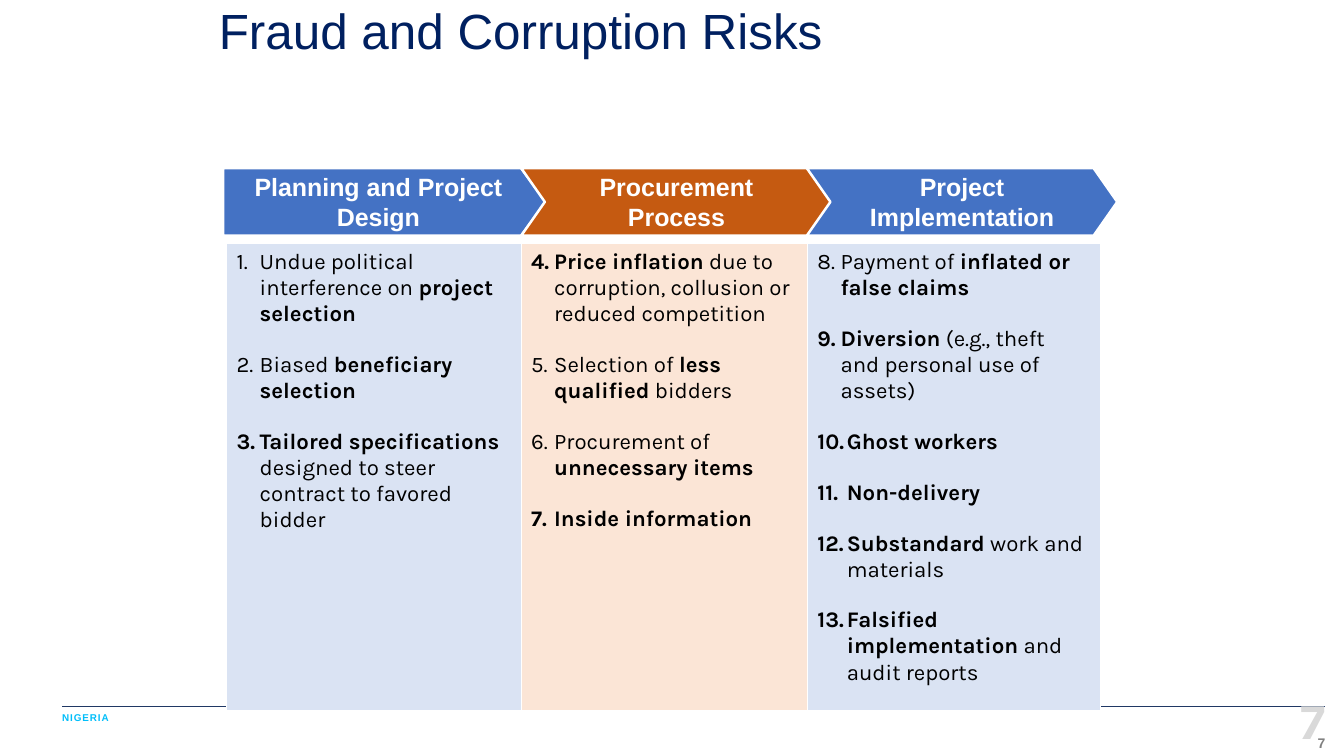
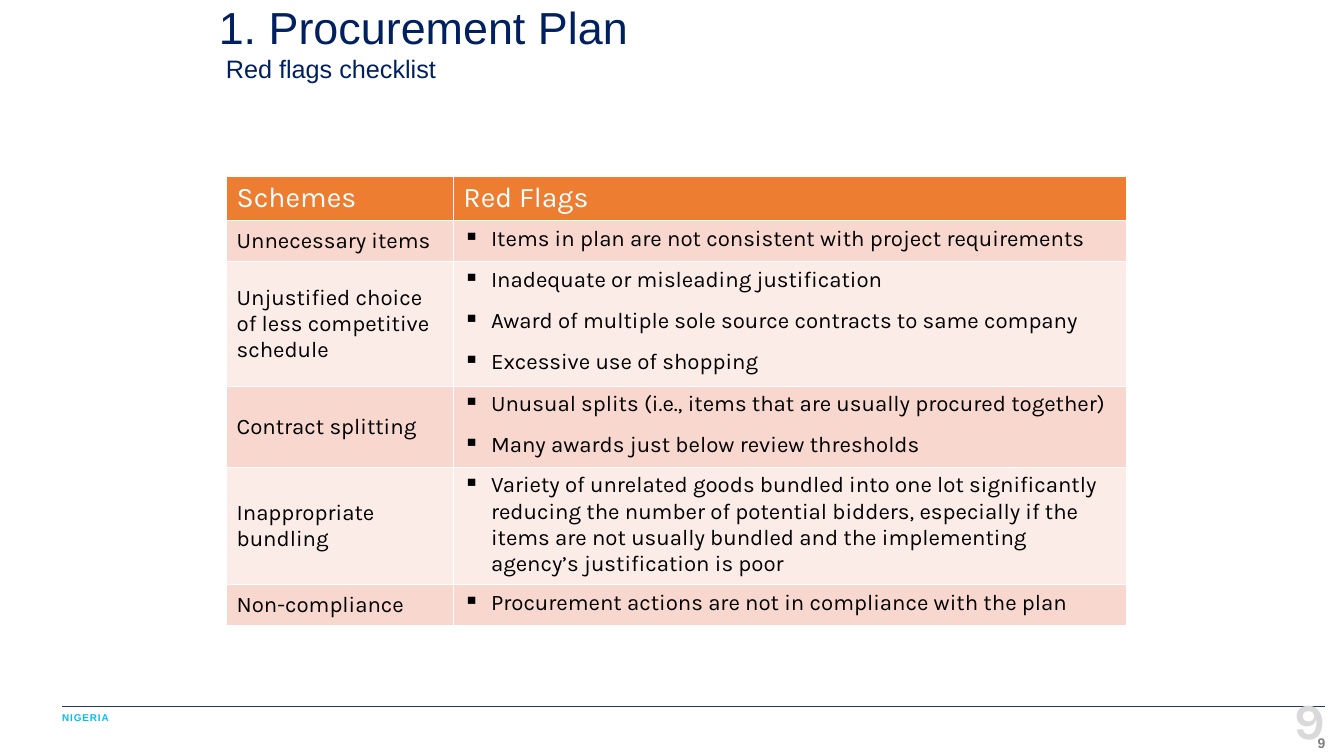
import lxml.etree
import pptx
import pptx.dml.color
import pptx.enum.shapes
import pptx.enum.text
import pptx.oxml.ns
import pptx.util

Inches = pptx.util.Inches
Pt = pptx.util.Pt
RGBColor = pptx.dml.color.RGBColor
Align = pptx.enum.text.PP_ALIGN
Anchor = pptx.enum.text.MSO_ANCHOR
Preset = pptx.enum.shapes.MSO_SHAPE
qn = pptx.oxml.ns.qn

SLIDE_WIDTH, SLIDE_HEIGHT = 15.11, 8.5

NAVY = RGBColor(0x00, 0x20, 0x60)
RULE_NAVY = RGBColor(0x20, 0x38, 0x64)
SKY = RGBColor(0x00, 0xBE, 0xFA)
GRAY = RGBColor(0x80, 0x80, 0x80)
PALE_GRAY = RGBColor(0xD9, 0xD9, 0xD9)
WHITE = RGBColor(0xFF, 0xFF, 0xFF)
BLACK = RGBColor(0x00, 0x00, 0x00)
BLUE = RGBColor(0x44, 0x72, 0xC4)
RUST = RGBColor(0xC5, 0x5A, 0x11)
PALE_BLUE = RGBColor(0xDA, 0xE3, 0xF3)
PALE_ORANGE = RGBColor(0xFB, 0xE5, 0xD6)
ORANGE = RGBColor(0xED, 0x7D, 0x31)
ROSE = RGBColor(0xF8, 0xD7, 0xCE)
PALE_ROSE = RGBColor(0xFC, 0xEC, 0xE8)

HEAD_FONT, BODY_FONT = "Arial", "Karla"
BODY_SIZE = 18

# Places are percentages of the slide's width and height.
FOOTER_LEFT, FOOTER_RIGHT = 4.63, 98.61
TITLE_LEFT, TITLE_TOP, TITLE_WIDTH = 16.28, 0, 67.5
TABLE_LEFT = 16.88
STAGE_TOP, STAGE_HEIGHT = 22.24, 8.94

# Stage: title, preset, left, width, point depth, header fill
STAGES = [
    ("Planning and Project Design", Preset.PENTAGON, 16.61, 24.02, 0.37, BLUE),
    ("Procurement Process", Preset.CHEVRON, 38.78, 23.1, 0.35, RUST),
    ("Project Implementation", Preset.CHEVRON, 60.03, 23.1, 0.35, BLUE),
]

# Risks: column width, fill, items with bold parts between asterisks
RISKS = [
    (21.91, PALE_BLUE, [
        "Undue political interference on *project selection*",
        "Biased *beneficiary selection*",
        "*Tailored specifications* designed to steer contract to favored bidder",
    ]),
    (21.31, PALE_ORANGE, [
        "*Price inflation* due to corruption, collusion or reduced competition",
        "Selection of *less qualified* bidders",
        "Procurement of *unnecessary items*",
        "*Inside information*",
    ]),
    (21.77, PALE_BLUE, [
        "Payment of *inflated or false claims*",
        "*Diversion* (e.g., theft and personal use of assets)",
        "*Ghost workers*",
        "*Non-delivery*",
        "*Substandard* work and materials",
        "*Falsified implementation* and audit reports",
    ]),
]

# Red flags: row height, scheme, flags
RED_FLAGS = [
    (5.41, "Unnecessary items", [
        "Items in plan are not consistent with project requirements",
    ]),
    (16.47, "Unjustified choice of less competitive schedule", [
        "Inadequate or misleading justification",
        "Award of multiple sole source contracts to same company",
        "Excessive use of shopping",
    ]),
    (10.71, "Contract splitting", [
        "Unusual splits (i.e., items that are usually procured together)",
        "Many awards just below review thresholds",
    ]),
    (15.53, "Inappropriate bundling", [
        "Variety of unrelated goods bundled into one lot significantly reducing "
        "the number of potential bidders, especially if the items are not "
        "usually bundled and the implementing agency’s justification is poor",
    ]),
    (5.41, "Non-compliance", [
        "Procurement actions are not in compliance with the plan",
    ]),
]


def across(percent):
    return Inches(SLIDE_WIDTH * percent / 100)


def down(percent):
    return Inches(SLIDE_HEIGHT * percent / 100)


def write(para, text, size=BODY_SIZE, color=BLACK, font=BODY_FONT, bold=False,
          tracking=None):
    """Add a formatted run; tracking is in points."""
    span = para.add_run()
    span.text = text
    span.font.name = font
    span.font.size = Pt(size)
    span.font.bold = bold
    span.font.color.rgb = color
    if tracking:
        span._r.get_or_add_rPr().set("spc", str(round(tracking * 100)))


def write_marked(para, text):
    """Write body text, with the parts between asterisks in bold."""
    for index, part in enumerate(text.split("*")):
        if part:
            write(para, part, bold=index % 2 == 1)


def add_para(frame, index):
    return frame.add_paragraph() if index else frame.paragraphs[0]


def add_mark(para, indent, tag, **attributes):
    """Give a paragraph a hanging bullet or number."""
    properties = para._p.get_or_add_pPr()
    properties.set("marL", str(Inches(indent)))
    properties.set("indent", str(-Inches(indent)))
    lxml.etree.SubElement(properties, qn(tag), attributes)


def add_box(page, left, top, width, height, align=Align.LEFT):
    """Add a text box without insets and return its frame."""
    box = page.shapes.add_textbox(
        across(left), down(top), across(width), down(height))
    frame = box.text_frame
    frame.word_wrap = True
    frame.margin_left = frame.margin_right = 0
    frame.margin_top = frame.margin_bottom = 0
    frame.paragraphs[0].alignment = align
    return frame


def add_title(page, title, size, subtitle=None):
    frame = add_box(page, TITLE_LEFT, TITLE_TOP, TITLE_WIDTH, STAGE_HEIGHT)
    write(frame.paragraphs[0], title, size=size, color=NAVY, font=HEAD_FONT)
    if subtitle:
        para = frame.add_paragraph()
        para._p.get_or_add_pPr().set("marL", str(Inches(0.08)))
        write(para, subtitle, size=20.4, color=NAVY, font=HEAD_FONT)


def add_footer(page, number):
    rule = page.shapes.add_connector(
        pptx.enum.shapes.MSO_CONNECTOR.STRAIGHT,
        across(FOOTER_LEFT), down(93.41), across(FOOTER_RIGHT), down(93.41))
    rule.line.color.rgb = RULE_NAVY
    rule.line.width = Pt(0.75)
    lxml.etree.SubElement(rule._element.spPr, qn("a:effectLst"))

    country = add_box(page, FOOTER_LEFT, 94.12, 13.24, 1.53)
    write(country.paragraphs[0], "NIGERIA", size=8, color=SKY, font=HEAD_FONT,
          bold=True, tracking=0.7)

    numbers = [(97.18, 2.24, 11.3, GRAY, HEAD_FONT),
               (91.18, 8.1, 40.8, PALE_GRAY, BODY_FONT)]
    for top, height, size, color, font in numbers:
        frame = add_box(page, FOOTER_RIGHT - 4, top, 4, height, Align.RIGHT)
        write(frame.paragraphs[0], str(number), size=size, color=color,
              font=font, bold=True)


def add_grid(page, top, widths, heights):
    """Add a table with plain rows and return it."""
    table = page.shapes.add_table(
        len(heights), len(widths), across(TABLE_LEFT), down(top),
        across(sum(widths)), down(sum(heights))).table
    table.first_row = table.horz_banding = False
    for column, width in zip(table.columns, widths):
        column.width = across(width)
    for row, height in zip(table.rows, heights):
        row.height = down(height)
    return table


def format_cell(cell, fill, anchor=Anchor.TOP):
    """Fill a cell, set its insets and return its text frame."""
    cell.fill.solid()
    cell.fill.fore_color.rgb = fill
    cell.vertical_anchor = anchor
    cell.margin_left = Inches(0.11)
    cell.margin_right = Inches(0.15)
    cell.margin_top = cell.margin_bottom = Inches(0.06)
    return cell.text_frame


def add_stage(page, title, preset, left, width, depth, fill):
    stage = page.shapes.add_shape(
        preset, across(left), down(STAGE_TOP), across(width), down(STAGE_HEIGHT))
    stage.adjustments[0] = depth
    stage.shadow.inherit = False
    stage.fill.solid()
    stage.fill.fore_color.rgb = fill
    stage.line.color.rgb = WHITE
    stage.line.width = Pt(2)
    frame = stage.text_frame
    frame.word_wrap = True
    frame.vertical_anchor = Anchor.MIDDLE
    para = frame.paragraphs[0]
    para.alignment = Align.CENTER
    write(para, title, size=20.2, color=WHITE, font=HEAD_FONT, bold=True)


def build_risks(page):
    add_footer(page, 7)
    add_title(page, "Fraud and Corruption Risks", 40)
    table = add_grid(page, 32.24, [width for width, _, _ in RISKS], [61.76])
    first = 1
    for column, (_, fill, items) in enumerate(RISKS):
        frame = format_cell(table.cell(0, column), fill)
        for index, item in enumerate(items):
            para = add_para(frame, index)
            add_mark(para, 0.26 if first + index < 10 else 0.33,
                     "a:buAutoNum", type="arabicPeriod", startAt=str(first))
            if index:
                para.space_before = Pt(20)
            write_marked(para, item)
        first += len(items)
    for stage in STAGES:
        add_stage(page, *stage)


def build_red_flags(page):
    add_footer(page, 9)
    heights = [5.88] + [height for height, _, _ in RED_FLAGS]
    table = add_grid(page, 23.29, [16.88, 50.03], heights)
    for column, heading in enumerate(["Schemes", "Red Flags"]):
        frame = format_cell(table.cell(0, column), ORANGE)
        write(frame.paragraphs[0], heading, size=23, color=WHITE)
    for row, (_, scheme, flags) in enumerate(RED_FLAGS, start=1):
        fill = ROSE if row % 2 else PALE_ROSE
        frame = format_cell(table.cell(row, 0), fill, Anchor.MIDDLE)
        write(frame.paragraphs[0], scheme)
        frame = format_cell(table.cell(row, 1), fill)
        for index, flag in enumerate(flags):
            para = add_para(frame, index)
            add_mark(para, 0.31, "a:buChar", char="▪")
            para.space_after = Pt(12)
            write(para, flag)
    add_title(page, "1. Procurement Plan", 36.3, "Red flags checklist")


def main():
    deck = pptx.Presentation()
    deck.slide_width = Inches(SLIDE_WIDTH)
    deck.slide_height = Inches(SLIDE_HEIGHT)
    blank = deck.slide_layouts[6]
    for build in (build_risks, build_red_flags):
        build(deck.slides.add_slide(blank))
    deck.save("out.pptx")


if __name__ == "__main__":
    main()
